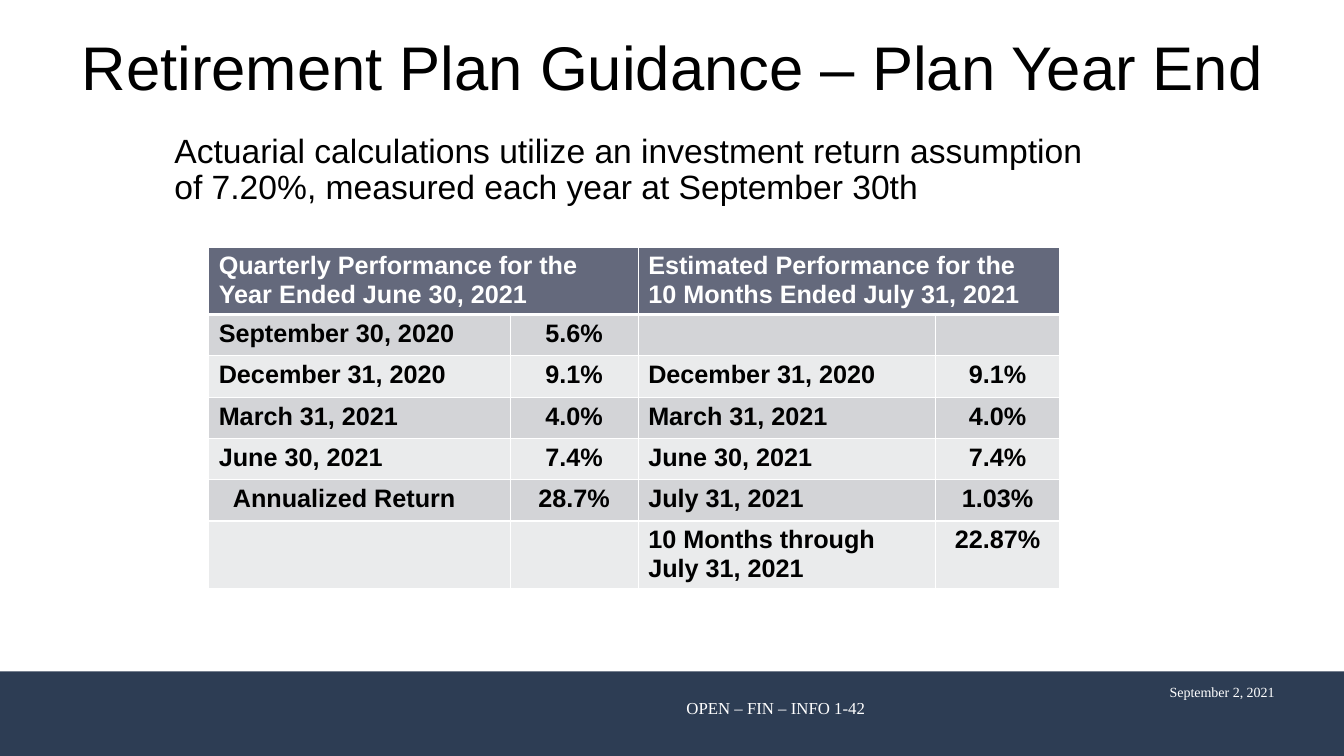
import dataclasses

import lxml.etree
import pptx
import pptx.dml.color
import pptx.enum.shapes
import pptx.enum.text
import pptx.oxml.ns
import pptx.util

EMU_PER_PX = 9144  # 100 px to the inch
ALIGN = pptx.enum.text.PP_ALIGN
ANCHOR = pptx.enum.text.MSO_ANCHOR

WHITE, BLACK, NAVY = "FFFFFF", "000000", "2D3D54"
HEADER_FILL, BAND_FILLS = "64697C", ("D3D4D7", "EAEBEC")
COLUMN_WIDTHS = (299, 127, 295, 123)
ROW_HEIGHT = 41
HEADERS = (
    "Quarterly Performance for the Year Ended June 30, 2021",
    "Estimated Performance for the 10 Months Ended July 31, 2021",
)
RETURNS = (
    ("September 30, 2020", "5.6%", "", ""),
    ("December 31, 2020", "9.1%", "December 31, 2020", "9.1%"),
    ("March 31, 2021", "4.0%", "March 31, 2021", "4.0%"),
    ("June 30, 2021", "7.4%", "June 30, 2021", "7.4%"),
    ("Annualized Return", "28.7%", "July 31, 2021", "1.03%"),
    ("", "", "10 Months through\nJuly 31, 2021", "22.87%"),
)


@dataclasses.dataclass
class FooterText:
    text: str
    left: int
    top: int
    width: int
    height: int
    size: int
    align: ALIGN


FOOTERS = (
    FooterText("September 2, 2021", 1123, 673, 151, 27, 10, ALIGN.RIGHT),
    FooterText("OPEN – FIN – INFO 1-42", 667, 687, 205, 30, 12, ALIGN.CENTER),
)


def px(length: int) -> pptx.util.Emu:
    return pptx.util.Emu(length * EMU_PER_PX)


def color(value: str) -> pptx.dml.color.RGBColor:
    return pptx.dml.color.RGBColor.from_string(value)


def place(shape, left: int, top: int, width: int, height: int) -> None:
    shape.left, shape.top = px(left), px(top)
    shape.width, shape.height = px(width), px(height)


def write(frame, text: str, *, size: int, fill: str = BLACK, font: str = "Arial",
          bold: bool = False, align: ALIGN = ALIGN.LEFT) -> None:
    """Fill a text frame, one paragraph per line of text."""
    frame.text = text
    for para in frame.paragraphs:
        para.alignment = align
        for span in para.runs:
            span.font.name, span.font.size = font, pptx.util.Pt(size)
            span.font.bold = bold
            span.font.color.rgb = color(fill)


def add_title(page) -> None:
    title = page.shapes.title
    place(title, 1, 0, 1333, 130)
    frame = title.text_frame
    frame.auto_size = pptx.enum.text.MSO_AUTO_SIZE.NONE
    frame.vertical_anchor = ANCHOR.MIDDLE
    write(frame, "Retirement Plan Guidance – Plan Year End", size=44, align=ALIGN.CENTER)


def add_body(page) -> None:
    body = page.placeholders[1]
    place(body, 163, 128, 931, 117)
    frame = body.text_frame
    frame.auto_size = pptx.enum.text.MSO_AUTO_SIZE.NONE
    write(frame, "Actuarial calculations utilize an investment return assumption "
          "of 7.20%, measured each year at September 30th", size=24)
    para = frame.paragraphs[0]
    para.line_spacing = 0.9
    para.space_before, para.space_after = pptx.util.Pt(0), pptx.util.Pt(5)
    properties = para._p.get_or_add_pPr()
    properties.set("marL", "0")
    properties.set("indent", "0")
    lxml.etree.SubElement(properties, pptx.oxml.ns.qn("a:buNone"))


def style_cell(cell, fill: str, bottom_width: int) -> None:
    """Give a cell white borders, a plain fill and a tight lower margin."""
    properties = cell._tc.get_or_add_tcPr()
    for side, width in (("L", 1), ("R", 1), ("T", 1), ("B", bottom_width)):
        line = lxml.etree.SubElement(properties, pptx.oxml.ns.qn(f"a:ln{side}"),
                                     w=str(pptx.util.Pt(width)))
        solid = lxml.etree.SubElement(line, pptx.oxml.ns.qn("a:solidFill"))
        lxml.etree.SubElement(solid, pptx.oxml.ns.qn("a:srgbClr"), val=WHITE)
    cell.fill.solid()
    cell.fill.fore_color.rgb = color(fill)
    cell.margin_bottom = px(2)


def add_returns_table(page) -> None:
    row_count = len(RETURNS) + 1
    table = page.shapes.add_table(
        row_count, len(COLUMN_WIDTHS), px(207), px(245),
        px(sum(COLUMN_WIDTHS)), px(ROW_HEIGHT * row_count)).table
    for column, width in zip(table.columns, COLUMN_WIDTHS):
        column.width = px(width)
    for row in table.rows:
        row.height = px(ROW_HEIGHT)

    for index in range(len(COLUMN_WIDTHS)):
        style_cell(table.cell(0, index), HEADER_FILL, 3)
    for index, text in enumerate(HEADERS):
        header = table.cell(0, index * 2)
        header.merge(table.cell(0, index * 2 + 1))
        write(header.text_frame, text, size=18, fill=WHITE, bold=True)

    for row_index, values in enumerate(RETURNS, start=1):
        for column_index, text in enumerate(values):
            cell = table.cell(row_index, column_index)
            style_cell(cell, BAND_FILLS[(row_index - 1) % 2], 1)
            write(cell.text_frame, text, size=18, bold=True,
                  align=ALIGN.CENTER if column_index % 2 else ALIGN.LEFT)
            if text == "Annualized Return":
                cell.margin_left = px(24)


def add_footer(page) -> None:
    bar = page.shapes.add_shape(pptx.enum.shapes.MSO_SHAPE.RECTANGLE,
                                px(0), px(666), px(1333), px(84))
    bar.shadow.inherit = False
    bar.fill.solid()
    bar.fill.fore_color.rgb = color(NAVY)
    bar.line.fill.background()
    for item in FOOTERS:
        box = page.shapes.add_textbox(px(item.left), px(item.top),
                                      px(item.width), px(item.height))
        box.text_frame.word_wrap = True
        write(box.text_frame, item.text, size=item.size, fill=WHITE,
              font="Times New Roman", align=item.align)


def main() -> None:
    deck = pptx.Presentation()
    deck.slide_width, deck.slide_height = px(1333), px(750)
    page = deck.slides.add_slide(deck.slide_layouts[1])
    add_footer(page)
    add_body(page)
    add_title(page)
    add_returns_table(page)
    deck.save("out.pptx")


if __name__ == "__main__":
    main()
